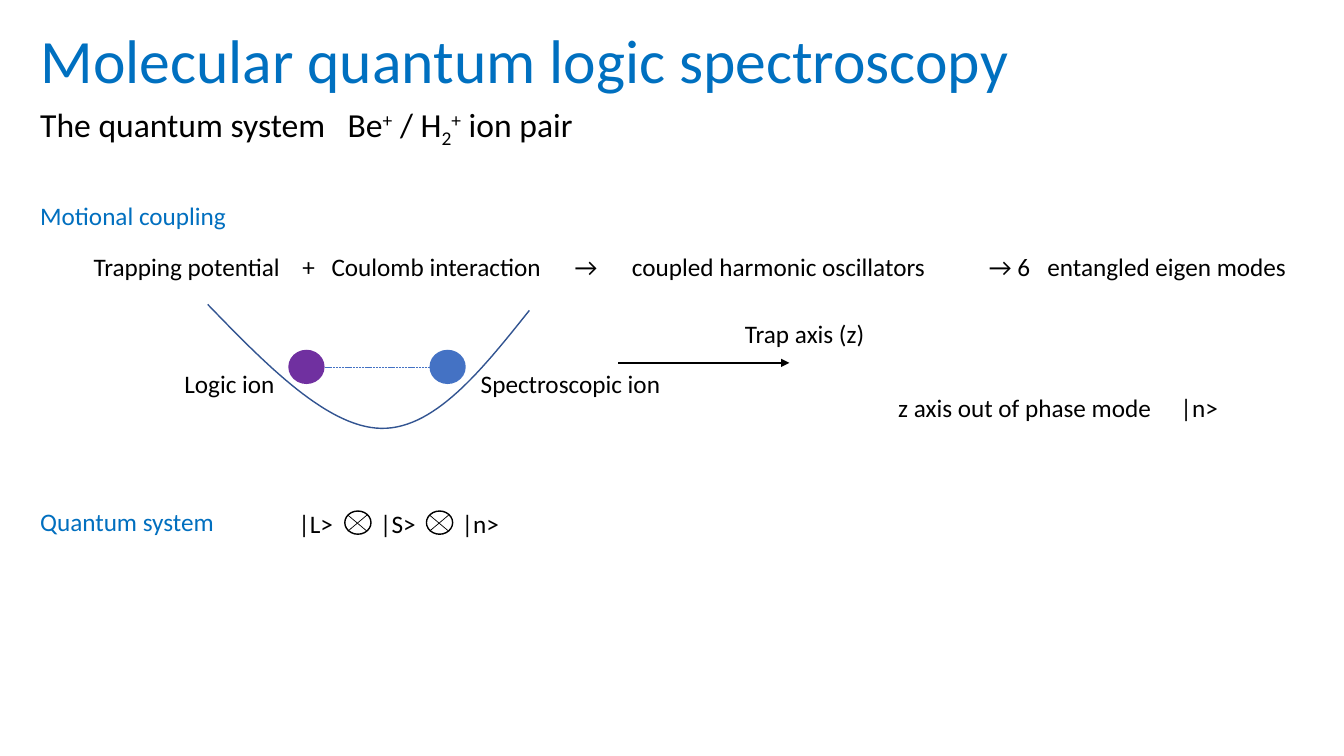
from lxml.etree import SubElement
from pptx import Presentation
from pptx.dml.color import RGBColor
from pptx.enum.dml import MSO_LINE
from pptx.enum.shapes import MSO_CONNECTOR, MSO_SHAPE
from pptx.enum.text import MSO_ANCHOR, PP_ALIGN
from pptx.oxml.ns import qn
from pptx.util import Inches, Pt

BLACK, TITLE_BLUE, HEADING_BLUE = "000000", "0070C0", "016FBF"
LOGIC_PURPLE, ION_BLUE, CURVE_BLUE = "7030A0", "4472C4", "325491"
LINE_HEIGHT = 0.4


def paint(color_format, color):
    """Apply a hex colour to a fill, line or font colour."""
    color_format.rgb = RGBColor.from_string(color)


def format_text(box, size, color, tabs=()):
    """Style every run in a box and set tab stops in inches."""
    frame = box.text_frame
    frame.word_wrap = bool(tabs)
    frame.vertical_anchor = MSO_ANCHOR.TOP
    para = frame.paragraphs[0]
    para.alignment = PP_ALIGN.LEFT
    if tabs:
        tab_list = SubElement(para._p.get_or_add_pPr(), qn("a:tabLst"))
        for position in tabs:
            SubElement(tab_list, qn("a:tab"), pos=str(Inches(position)), algn="l")
    for span in para.runs:
        span.font.name = "Calibri"
        span.font.size = Pt(size)
        paint(span.font.color, color)


def add_label(page, text, left, top, width, color=BLACK, tabs=()):
    """Add one 18 point line of text."""
    box = page.shapes.add_textbox(*map(Inches, (left, top, width, LINE_HEIGHT)))
    box.text_frame.text = text
    format_text(box, 18, color, tabs)


def add_line(page, start, end, color=BLACK, width=0.5):
    """Add a straight line without shadow."""
    line = page.shapes.add_connector(MSO_CONNECTOR.STRAIGHT, *map(Inches, start + end))
    paint(line.line.color, color)
    line.line.width = Pt(width)
    SubElement(line._element.spPr, qn("a:effectLst"))
    return line


def add_oval(page, left, top, width, height, fill=None):
    """Add a filled oval, or a black outline when no fill is given."""
    oval = page.shapes.add_shape(MSO_SHAPE.OVAL, *map(Inches, (left, top, width, height)))
    oval.shadow.inherit = False
    if fill:
        oval.fill.solid()
        paint(oval.fill.fore_color, fill)
        oval.line.fill.background()
    else:
        oval.fill.background()
        paint(oval.line.color, BLACK)
        oval.line.width = Pt(1)


def add_heading(page, left, top):
    """Place the title and the line naming the ion pair."""
    title = page.shapes.title
    title.left, title.top, title.width, title.height = map(Inches, (left, top, 9.91, 0.84))
    title.text_frame.text = "Molecular quantum logic spectroscopy"
    format_text(title, 44, TITLE_BLUE)

    box = page.shapes.add_textbox(*map(Inches, (left, top + 0.81, 5.75, 0.5)))
    para = box.text_frame.paragraphs[0]
    pieces = [("The quantum system\tBe", 0), ("+", 30), (" / H", 0),
              ("2", -25), ("+", 30), (" ion pair", 0)]
    for text, baseline in pieces:
        span = para.add_run()
        span.text = text
        if baseline:
            span._r.get_or_add_rPr().set("baseline", str(baseline * 1000))
    format_text(box, 24, BLACK, tabs=(3.05,))


def add_coupling(page, left, top):
    """Place the motional coupling heading and its chain of ideas."""
    add_label(page, "Motional coupling", left, top, 2.07, HEADING_BLUE)
    row = top + 0.5
    add_label(page, "Trapping potential", left + 0.53, row, 2.07)
    add_label(page, "+\tCoulomb interaction\t→\tcoupled harmonic oscillators",
              left + 2.6, row, 6.46, tabs=(0.29, 2.7, 3.27))
    add_label(page, "→ 6\tentangled eigen modes", left + 9.41, row, 3.19, tabs=(0.58,))


def bezier(points, steps=30):
    """Sample a cubic curve, leaving out its first point."""
    for step in range(1, steps + 1):
        t = step / steps
        weights = ((1 - t) ** 3, 3 * t * (1 - t) ** 2, 3 * t * t * (1 - t), t ** 3)
        yield tuple(Inches(sum(w * point[axis] for w, point in zip(weights, points)))
                    for axis in (0, 1))


def add_trap(page, left, top):
    """Draw the potential well with its two coupled ions."""
    start, bottom, end = (left, top), (left + 1.72, top + 1.23), (left + 3.19, top + 0.06)
    falling = (start, (left + 0.59, top + 0.61), (left + 1.19, top + 1.22), bottom)
    rising = (bottom, (left + 2.25, top + 1.24), (left + 2.72, top + 0.65), end)
    builder = page.shapes.build_freeform(Inches(left), Inches(top))
    builder.add_line_segments([*bezier(falling), *bezier(rising)], close=False)
    well = builder.convert_to_shape()
    well.shadow.inherit = False
    well.fill.background()
    paint(well.line.color, CURVE_BLUE)
    well.line.width = Pt(1)

    for offset, color in ((0.8, LOGIC_PURPLE), (2.2, ION_BLUE)):
        add_oval(page, left + offset, top + 0.45, 0.36, 0.34, color)
    bond = add_line(page, (left + 1.16, top + 0.62), (left + 2.2, top + 0.62), ION_BLUE)
    bond.line.dash_style = MSO_LINE.SQUARE_DOT
    bond.line._ln.find(qn("a:prstDash")).set("val", "sysDash")
    add_label(page, "Logic ion", left - 0.33, top + 0.58, 1.11)
    add_label(page, "Spectroscopic ion", left + 2.61, top + 0.58, 2)


def add_axis(page, left, top):
    """Draw the trap axis arrow and name the mode used."""
    arrow = add_line(page, (left, top), (left + 1.7, top), width=1)
    SubElement(arrow.line._ln, qn("a:tailEnd"), type="triangle")
    add_label(page, "Trap axis (z)", left + 1.16, top - 0.49, 1.4)
    add_label(page, "z axis out of phase mode", left + 2.68, top + 0.24, 2.76)
    add_label(page, "|n>", left + 5.48, top + 0.24, 0.58)


def add_tensor(page, left, top):
    """Draw a circled cross."""
    add_oval(page, left, top, 0.26, 0.23)
    near, far, high, low = left + 0.03, left + 0.22, top + 0.04, top + 0.2
    add_line(page, (far, high), (near, low))
    add_line(page, (near, high), (far, low))


def add_state(page, left, top):
    """Place the product state of the whole system."""
    add_label(page, "Quantum system", left, top, 1.94, HEADING_BLUE)
    pitch = 0.81
    states = (("|L>", 0.55), ("|S>", 0.56), ("|n>", 0.58))
    for index, (state, width) in enumerate(states):
        state_left = left + 2.56 + index * pitch
        add_label(page, state, state_left, top + 0.02, width)
        if index < len(states) - 1:
            add_tensor(page, state_left + 0.56, top + 0.1)


def main():
    """Build and save the slide."""
    deck = Presentation()
    deck.slide_width, deck.slide_height = Inches(13.33), Inches(7.5)
    page = deck.slides.add_slide(deck.slide_layouts[5])
    margin = 0.3
    add_heading(page, margin, 0.17)
    add_coupling(page, margin, 1.94)
    add_trap(page, 2.06, 3.02)
    add_axis(page, 6.13, 3.6)
    add_state(page, margin, 4.97)
    deck.save("out.pptx")


if __name__ == "__main__":
    main()
